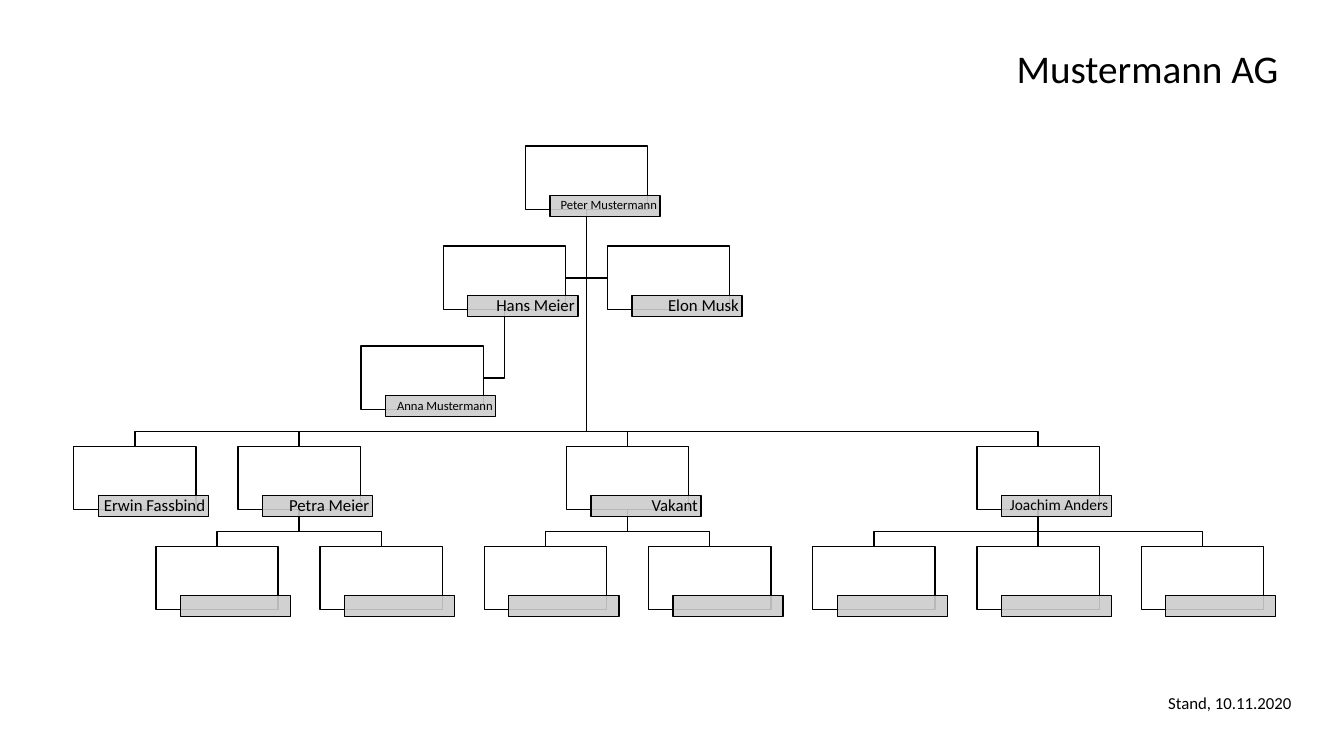
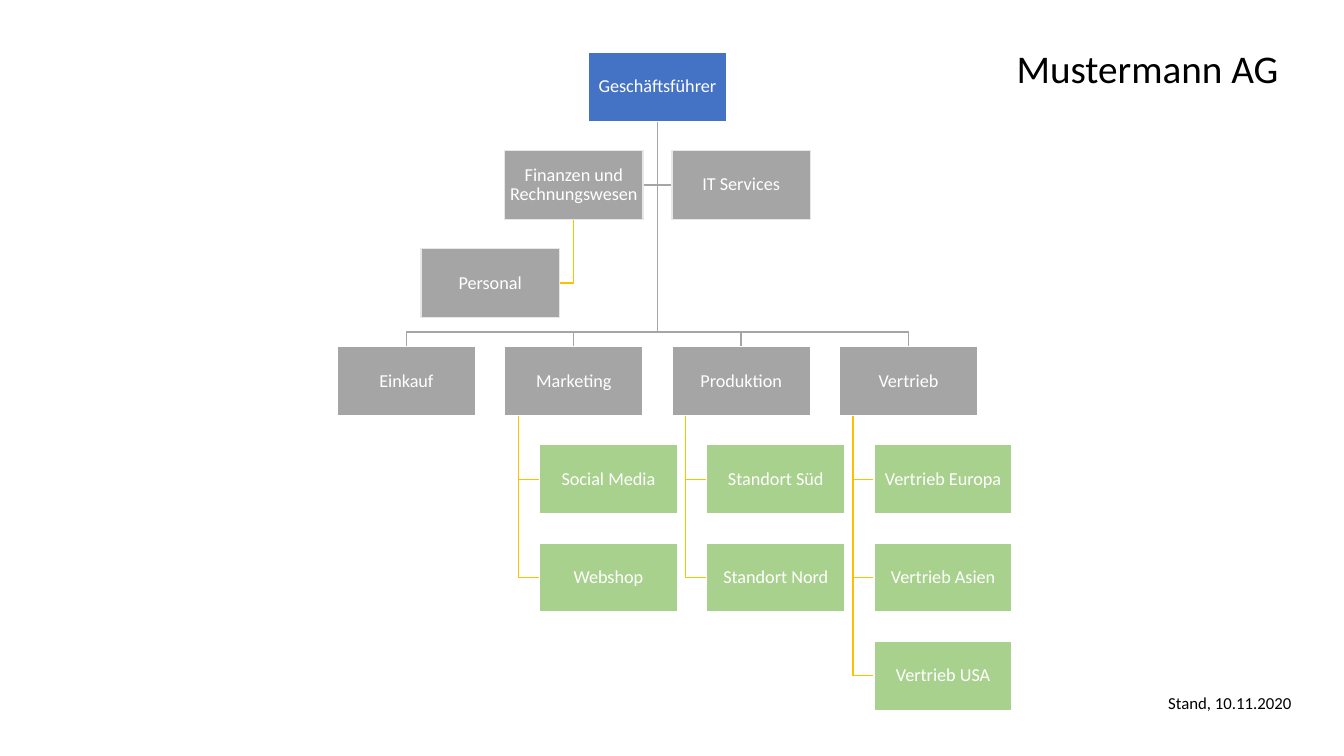
from pptx import Presentation, util as u
from pptx.dml.color import RGBColor
from pptx.enum import shapes, text
from pptx.oxml.ns import qn
from lxml import etree

Pt = u.Pt
HUE = {"ink": "000000", "paper": "FFFFFF", "tag": "CCCCCC", "blue": "4472C4",
       "grey": "A5A5A5", "rim": "E7E7E7", "green": "A9D18E", "gold": "FFC000"}
RIGHT, MID = text.PP_ALIGN.RIGHT, text.PP_ALIGN.CENTER
TOP, LOW, HALF = (text.MSO_ANCHOR.TOP, text.MSO_ANCHOR.BOTTOM,
                  text.MSO_ANCHOR.MIDDLE)


def put(page, words, spot, size, hue="ink", fill=None, rim=None,
        side=RIGHT, hold=HALF, pad=(7.2, 3.6), lead=0.9):
    """Add a text box, or a filled rectangle when a fill is given."""
    area = [Pt(n) for n in spot]
    if fill:
        item = page.shapes.add_shape(shapes.MSO_SHAPE.RECTANGLE, *area)
        item.shadow.inherit = False
        item.fill.solid()
        item.fill.fore_color.rgb = RGBColor.from_string(HUE[fill])
        item.line.color.rgb = RGBColor.from_string(HUE[rim])
        item.line.width = Pt(1)
    else:
        item = page.shapes.add_textbox(*area)
    if words:
        frame = item.text_frame
        form = {"word_wrap": True, "vertical_anchor": hold,
                "margin_left": Pt(pad[0]), "margin_right": Pt(pad[0]),
                "margin_top": Pt(pad[1]), "margin_bottom": Pt(pad[1])}
        for key, val in form.items():
            setattr(frame, key, val)
        para = frame.paragraphs[0]
        para.alignment, para.line_spacing = side, lead
        run = para.add_run()
        run.text = words
        for key, val in {"name": "Calibri", "size": Pt(size)}.items():
            setattr(run.font, key, val)
        run.font.color.rgb = RGBColor.from_string(HUE[hue])
    return item


def wire(page, hue, *dots):
    """Draw an open bent line through the dots."""
    ends = [(Pt(x), Pt(y)) for x, y in dots]
    pen = page.shapes.build_freeform(*ends[0])
    pen.add_line_segments(ends[1:], close=False)
    line = pen.convert_to_shape()
    line.shadow.inherit = False
    line.fill.background()
    line.line.color.rgb = RGBColor.from_string(HUE[hue])
    line.line.width = Pt(1)


deck = Presentation()
deck.slide_width, deck.slide_height = Pt(960), Pt(540)

# Title and date on both slides
pages = [deck.slides.add_slide(deck.slide_layouts[6]) for _ in range(2)]
for page in pages:
    put(page, "Mustermann AG", (30.2, 28.8, 890, 40.3), 28, hold=LOW)
    put(page, "Stand, 10.11.2020", (650.2, 491, 279.4, 21.8), 12,
        hold=TOP, lead=1)

# Slide 1: people, as (column, row, name, size)
page = pages[0]
wide, high, drop = 87.4, 45.4, 10.5
staff = [(5.5, 0, "Peter Mustermann", 9), (4.5, 1, "Hans Meier", 12),
         (6.5, 1, "Elon Musk", 12), (3.5, 2, "Anna Mustermann", 9),
         (0, 3, "Erwin Fassbind", 12), (2, 3, "Petra Meier", 12),
         (6, 3, "Vakant", 12), (11, 3, "Joachim Anders", 11)]
staff += [(col, 4, "", 12) for col in (1, 3, 5, 7, 9, 11, 13)]
mids = [96.4 + 58.65 * col for col, *_ in staff]
tops = [104.4 + 71.45 * row for _, row, *_ in staff]
cards = [put(page, "", (x - wide / 2, y, wide, high), 12,
             fill="paper", rim="ink") for x, y in zip(mids, tops)]

# Lines down to each team
teams = {0: (4, 5, 6, 7), 5: (8, 9), 6: (10, 11), 7: (12, 13, 14)}
for boss, team in teams.items():
    foot = tops[boss] + high
    for kid in team:
        if mids[kid] == mids[boss]:
            line = page.shapes.add_connector(
                shapes.MSO_CONNECTOR.STRAIGHT, 0, 0, 0, 0)
            line.begin_connect(cards[boss], 2)
            line.end_connect(cards[kid], 0)
            line.line.color.rgb = RGBColor.from_string(HUE["ink"])
            line.line.width = Pt(1)
            etree.SubElement(line._element.spPr, qn("a:effectLst"))
        else:
            bar = tops[kid] - drop
            wire(page, "ink", (mids[boss], foot), (mids[boss], bar),
                 (mids[kid], bar), (mids[kid], tops[kid]))

# Lines to the assistants
for boss, aide, turn in ((0, 1, 1), (0, 2, -1), (1, 3, 1)):
    level = tops[aide] + high / 2
    wire(page, "ink", (mids[boss], tops[boss] + high), (mids[boss], level),
         (mids[aide] + turn * wide / 2, level))

# Name tags
for x, y, (_, _, name, size) in zip(mids, tops, staff):
    tag = put(page, name, (x - wide / 2 + 17.5, y + 35.1, 78.7, 15.1), size,
              fill="tag", rim="ink", pad=(2.2, 0.7))
    tint = tag._element.spPr.find(qn("a:solidFill"))[0]
    etree.SubElement(tint, qn("a:alpha"), val="90000")

# Slide 2: departments, as (column, row, name, fill, rim)
page = pages[1]
wide, high = 98.8, 49.4
left, top, step, fall = 290.3, 37.3, 59.77, 70.1
units = [(3, 0, "Geschäftsführer", "blue", "paper"),
         (2, 1, "Finanzen und Rechnungswesen", "grey", "rim"),
         (4, 1, "IT Services", "grey", "rim"),
         (1, 2, "Personal", "grey", "rim")]
heads = {"Einkauf": [], "Marketing": ["Social Media", "Webshop"],
         "Produktion": ["Standort Süd", "Standort Nord"],
         "Vertrieb": ["Vertrieb Europa", "Vertrieb Asien", "Vertrieb USA"]}
shift = wide / 4 / step

# Lines to departments and their units
root = left + 3 * step
bar = top + 3 * fall
for num, (head, subs) in enumerate(heads.items()):
    x = left + 2 * num * step
    wire(page, "grey", (root, top + high), (root, bar - drop),
         (x, bar - drop), (x, bar))
    units.append((2 * num, 3, head, "grey", "paper"))
    stem = x - 0.4 * wide
    for row, sub in enumerate(subs, 4):
        level = top + row * fall + high / 2
        wire(page, "gold", (stem, bar + high), (stem, level),
             (x - wide / 4, level))
        units.append((2 * num + shift, row, sub, "green", "paper"))

# Lines to the staff offices
for hue, boss, rank, aide, turn in (("grey", 3, 0, 2, 1), ("grey", 3, 0, 4, -1),
                                    ("gold", 2, 1, 1, 1)):
    x = left + boss * step
    level = top + (rank + 1) * fall + high / 2
    wire(page, hue, (x, top + rank * fall + high), (x, level),
         (left + aide * step + turn * wide / 2, level))

# Department boxes
for col, row, name, fill, rim in units:
    put(page, name, (left + col * step - wide / 2, top + row * fall, wide, high),
        13, hue="paper", fill=fill, rim=rim, side=MID, pad=(0.7, 0.7))

deck.save("out.pptx")
